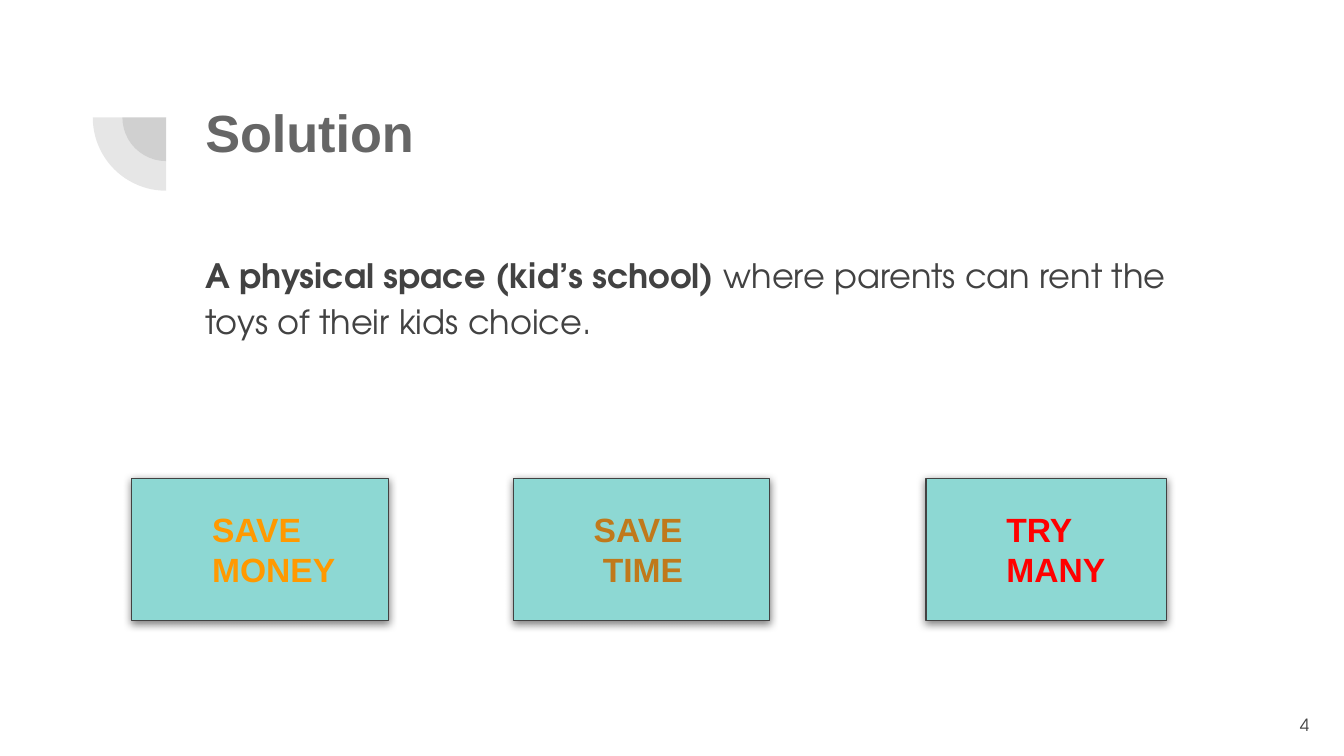
from lxml import etree
from pptx import Presentation
from pptx import util as u
from pptx.dml import color
from pptx.enum import shapes, text
from pptx.oxml import ns

Cm, Pt = u.Cm, u.Pt


def rgb(value):
    return color.RGBColor.from_string(value)


def style(run, size, font, hex_color, bold=False):
    run.font.size = Pt(size)
    run.font.name = font
    run.font.bold = bold
    run.font.color.rgb = rgb(hex_color)


DARK = "424242"
HEADING_FONT = "Arial"
BODY_FONT = "TeX Gyre Adventor"

prs = Presentation()
prs.slide_width, prs.slide_height = Cm(25.4), Cm(14.29)
slide = prs.slides.add_slide(prs.slide_layouts[6])

for diameter in (1.65, 2.77):
    quarter = slide.shapes.add_shape(
        shapes.MSO_SHAPE.PIE, Cm(3.14 - diameter / 2), Cm(2.22 - diameter / 2),
        Cm(diameter), Cm(diameter))
    quarter.adjustments[0] = 107.93
    quarter.adjustments[1] = 162
    quarter.rotation = 270
    quarter.shadow.inherit = False
    quarter.line.fill.background()
    quarter.fill.solid()
    quarter.fill.fore_color.rgb = rgb(DARK)
    tint = quarter.fill._xPr.find(".//" + ns.qn("a:srgbClr"))
    etree.SubElement(tint, ns.qn("a:alpha"), val="13000")

frames = []
for left, top, width, height in ((3.63, 1.65, 19.53, 2.77),
                                 (3.63, 4.45, 19.53, 7.06),
                                 (23.47, 13.16, 1.52, 1.09)):
    frame = slide.shapes.add_textbox(Cm(left), Cm(top), Cm(width), Cm(height)).text_frame
    frame.word_wrap = True
    frames.append(frame)
heading, pitch, page = frames

heading.text = "Solution"
style(heading.paragraphs[0].runs[0], 28, HEADING_FONT, "666666", True)

sentence = pitch.paragraphs[0]
sentence.line_spacing = 1.15
for words, bold in (("A physical space (kid’s school) ", True),
                    ("where parents can rent the toys of their kids choice.", False)):
    run = sentence.add_run()
    run.text = words
    style(run, 18, BODY_FONT, DARK, bold)

page.text = "4"
page.vertical_anchor = text.MSO_ANCHOR.MIDDLE
page.paragraphs[0].alignment = text.PP_ALIGN.RIGHT
style(page.paragraphs[0].runs[0], 9, BODY_FONT, DARK)

for frame in frames:
    frame.margin_left = frame.margin_right = Cm(0.25)
    frame.margin_top = frame.margin_bottom = Cm(0.25)

benefits = (
    (2.49, 4.85, "SAVE\nMONEY", "FF9900"),
    (9.7, 4.85, "SAVE\n TIME", "C0791B"),
    (17.5, 4.55, "TRY\nMANY", "FF0000"),
)
for left, width, words, hex_color in benefits:
    benefit = slide.shapes.add_shape(
        shapes.MSO_SHAPE.RECTANGLE, Cm(left), Cm(9.04), Cm(width), Cm(2.69))
    benefit.fill.solid()
    benefit.fill.fore_color.rgb = rgb("8DD8D3")
    benefit.line.color.rgb = rgb(DARK)
    benefit.line.width = Pt(0.75)
    benefit.shadow.inherit = False
    effects = benefit._element.spPr.find(ns.qn("a:effectLst"))
    shadow = etree.SubElement(
        effects, ns.qn("a:outerShdw"), blurRad=str(Pt(4.5)), dist=str(Pt(1.5)),
        dir="5400000", algn="bl", rotWithShape="0")
    shade = etree.SubElement(shadow, ns.qn("a:srgbClr"), val="000000")
    etree.SubElement(shade, ns.qn("a:alpha"), val="50000")

    label = benefit.text_frame
    label.text = words
    label.vertical_anchor = text.MSO_ANCHOR.MIDDLE
    label.margin_left = label.margin_right = Cm(0.25)
    for line in label.paragraphs:
        line.alignment = text.PP_ALIGN.LEFT
        line._p.get_or_add_pPr().set("indent", str(Cm(1.27)))
        style(line.runs[0], 18, HEADING_FONT, hex_color, True)

prs.save("out.pptx")
